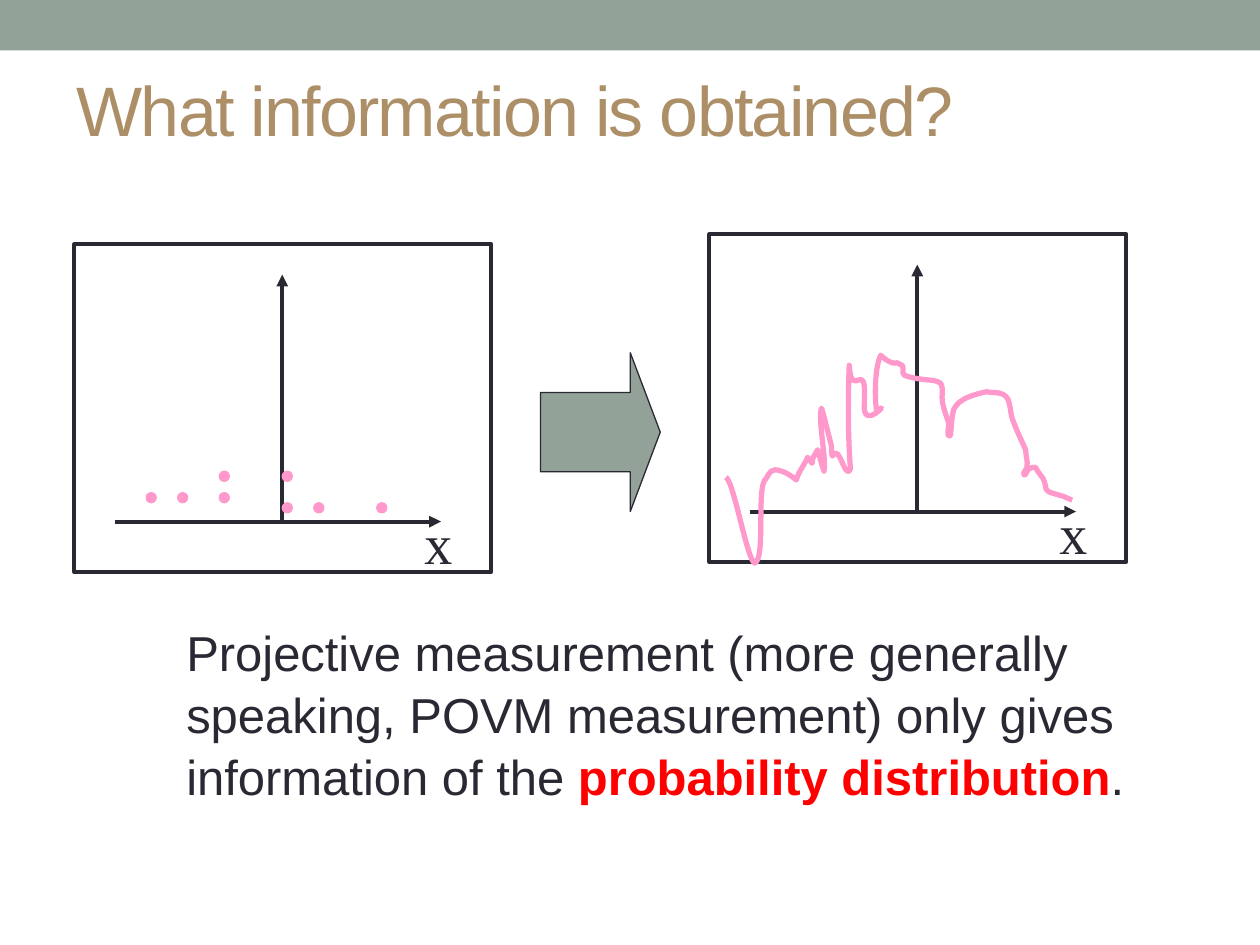
from lxml.etree import SubElement
from pptx import Presentation
from pptx.dml.color import RGBColor
from pptx.enum.shapes import MSO_CONNECTOR, MSO_SHAPE
from pptx.enum.text import MSO_ANCHOR
from pptx.oxml.ns import qn
from pptx.util import Inches, Pt

COLORS = {
    "sage": "93A299",
    "tan": "AD8F67",
    "ink": "292934",
    "pink": "FF99CC",
    "red": "FF0000",
}
PANEL_WIDTH, PANEL_HEIGHT = 3.31, 2.6
AXIS_BASE = 2.2
DOT_SIZE = 0.08
DOT_CENTERS = [
    (0.61, 2.01), (0.86, 2.01), (1.19, 2.01), (1.19, 1.84),
    (1.69, 1.84), (1.69, 2.09), (1.94, 2.09), (2.44, 2.09),
]
CURVE_START = (13, 193)
CURVE_SEGMENTS = [
    (19, 194, 30, 259, 36, 261), (45, 258, 37, 199, 45, 194),
    (48, 189, 49, 185, 57, 188), (62, 189, 69, 195, 69, 195),
    (71, 188, 75, 184, 78, 177), (84, 185, 80, 182, 83, 176),
    (84, 174, 85, 173, 86, 171), (90, 185, 88, 179, 91, 188),
    (93, 178, 86, 147, 89, 138), (90, 140, 96, 165, 97, 168),
    (97, 170, 97, 178, 98, 176), (103, 165, 108, 197, 112, 186),
    (109, 150, 111, 104, 111, 104), (113, 134, 125, 95, 123, 134),
    (121, 159, 146, 128, 133, 141), (131, 132, 131, 106, 136, 96),
    (136, 96, 144, 104, 149, 102), (150, 103, 152, 103, 153, 104),
    (155, 106, 152, 110, 155, 112), (162, 115, 178, 116, 178, 116),
    (180, 117, 183, 117, 184, 119), (186, 123, 184, 128, 185, 133),
    (186, 139, 188, 144, 190, 150), (190, 153, 188, 162, 191, 160),
    (192, 159, 192, 145, 194, 139), (198, 130, 211, 127, 220, 125),
    (224, 126, 229, 125, 233, 127), (235, 128, 236, 129, 237, 131),
    (239, 136, 239, 141, 240, 145), (243, 154, 247, 162, 251, 171),
    (251, 176, 253, 180, 252, 185), (252, 187, 248, 189, 250, 191),
    (251, 192, 252, 187, 254, 186), (255, 185, 257, 185, 259, 185),
    (260, 188, 263, 191, 265, 194), (269, 203, 264, 203, 274, 206),
    (276, 207, 279, 207, 281, 208), (283, 209, 288, 211, 288, 211),
]


def color(name):
    return RGBColor.from_string(COLORS[name])


def style_shape(shape, fill=None, line=None, weight=0.75):
    shape.shadow.inherit = False
    if fill:
        shape.fill.solid()
        shape.fill.fore_color.rgb = color(fill)
    else:
        shape.fill.background()
    if line:
        shape.line.color.rgb = color(line)
        shape.line.width = Pt(weight)
    else:
        shape.line.fill.background()


def add_shape(shapes, kind, left, top, width, height, **style):
    shape = shapes.add_shape(
        kind, Inches(left), Inches(top), Inches(width), Inches(height))
    style_shape(shape, **style)
    return shape


def add_text(slide, left, top, width, height, runs, size, font="Arial", wrap=True):
    box = slide.shapes.add_textbox(
        Inches(left), Inches(top), Inches(width), Inches(height))
    box.text_frame.word_wrap = wrap
    paragraph = box.text_frame.paragraphs[0]
    paragraph.font.name = font
    paragraph.font.size = Pt(size)
    for text, color_name, bold in runs:
        run = paragraph.add_run()
        run.text = text
        run.font.color.rgb = color(color_name)
        run.font.bold = bold
    return box


def add_axis(slide, start_x, start_y, end_x, end_y):
    axis = slide.shapes.add_connector(
        MSO_CONNECTOR.STRAIGHT,
        Inches(start_x), Inches(start_y), Inches(end_x), Inches(end_y))
    axis.line.color.rgb = color("ink")
    axis.line.width = Pt(2.25)
    properties = axis._element.spPr
    SubElement(properties.find(qn("a:ln")), qn("a:tailEnd"), type="triangle")
    SubElement(properties, qn("a:effectLst"))


def add_panel(slide, left, top):
    add_shape(slide.shapes, MSO_SHAPE.RECTANGLE, left, top,
              PANEL_WIDTH, PANEL_HEIGHT, line="ink", weight=2.25)
    base = top + AXIS_BASE
    middle = left + 1.65
    add_axis(slide, left + 0.32, base, left + 2.91, base)
    add_axis(slide, middle, base, middle, top + 0.24)
    add_text(slide, left + 2.68, top + 2.05, 0.42, 0.63,
             [("x", "ink", False)], 32, "Times New Roman", wrap=False)


def add_dots(slide, left, top):
    group = slide.shapes.add_group_shape()
    for x, y in DOT_CENTERS:
        add_shape(group.shapes, MSO_SHAPE.OVAL,
                  left + x - DOT_SIZE / 2, top + y - DOT_SIZE / 2,
                  DOT_SIZE, DOT_SIZE, fill="pink", line="pink")


def add_curve(slide, left, top):
    builder = slide.shapes.build_freeform(*CURVE_START, scale=Inches(0.01))
    for segment in CURVE_SEGMENTS:
        builder.add_line_segments(zip(segment[::2], segment[1::2]), close=False)
    curve = builder.convert_to_shape(Inches(left), Inches(top))
    style_shape(curve, line="pink", weight=3)
    outline = next(curve._element.iter(qn("a:path")))
    lines = outline.findall(qn("a:lnTo"))
    for index in range(0, len(lines), 3):
        bezier = SubElement(outline, qn("a:cubicBezTo"))
        for line in lines[index:index + 3]:
            bezier.append(line[0])
            outline.remove(line)


def add_heading(slide, left, top, width, height):
    add_shape(slide.shapes, MSO_SHAPE.RECTANGLE, 0, 0, 10, 0.4, fill="sage")
    title = add_text(slide, left, top, width, height,
                     [("What information is obtained?", "tan", False)], 40)
    title.text_frame.vertical_anchor = MSO_ANCHOR.MIDDLE
    paragraph = title.text_frame.paragraphs[0]
    paragraph.line_spacing = 0.8
    paragraph.runs[0]._r.get_or_add_rPr().set("spc", "-100")


def add_arrow(slide, left, top, width, height):
    arrow = add_shape(slide.shapes, MSO_SHAPE.RIGHT_ARROW,
                      left, top, width, height, fill="sage", line="ink")
    arrow.adjustments[0] = 0.5
    arrow.adjustments[1] = 0.25


def add_conclusion(slide, left, top, width, height):
    box = add_text(slide, left, top, width, height, [
        ("Projective measurement (more generally speaking, POVM measurement) "
         "only gives information of the ", "ink", False),
        ("probability distribution", "red", True),
        (".", "ink", False),
    ], 28)
    box.text_frame.paragraphs[0].line_spacing = 1.05


def main():
    presentation = Presentation()
    presentation.slide_width = Inches(10)
    presentation.slide_height = Inches(7.5)
    slide = presentation.slides.add_slide(presentation.slide_layouts[6])
    add_heading(slide, 0.51, 0.61, 8.25, 0.62)
    add_panel(slide, 5.63, 1.86)
    add_curve(slide, 5.63, 1.86)
    add_panel(slide, 0.59, 1.94)
    add_dots(slide, 0.59, 1.94)
    add_arrow(slide, 4.29, 2.8, 0.95, 1.26)
    add_conclusion(slide, 1.38, 4.87, 8.11, 1.5)
    presentation.save("out.pptx")


if __name__ == "__main__":
    main()
